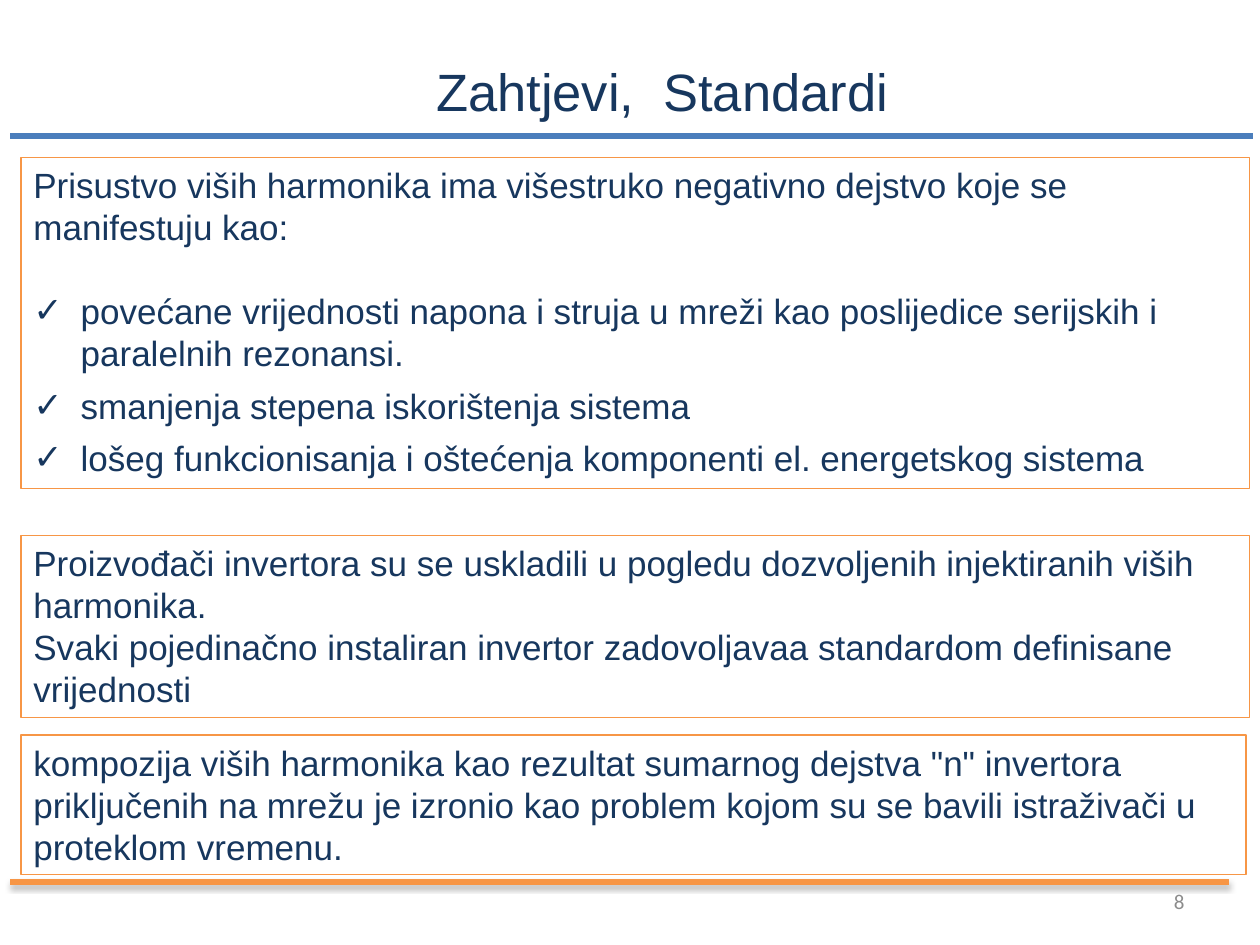
"""Build the slide on requirements and standards for harmonics."""
from lxml import etree
from pptx import Presentation
from pptx.dml.color import RGBColor
from pptx.enum import shapes, text
from pptx.oxml import ns
from pptx.util import Pt

NAVY = RGBColor(0x17, 0x37, 0x5E)
BLUE = RGBColor(0x4B, 0x7E, 0xBC)
ORANGE = RGBColor(0xF7, 0x96, 0x46)
GREY = RGBColor(0x8C, 0x8C, 0x8C)

BODY = {"name": "Arial", "size": Pt(20), "color": NAVY}
TITLE = {"name": "Arial", "size": Pt(30), "color": NAVY}
NUMBER = {"name": "Calibri", "size": Pt(12), "color": GREY}

PLAIN, INTRO, CHECK = "plain", "intro", "check"
SPACE_AFTER = {PLAIN: 0, INTRO: 24, CHECK: 6}
INDENT = 27

RULES = [(6, 77.75, 716, BLUE, False), (6, 504, 702, ORANGE, True)]
LABELS = [
    ("8", (516, 500.5, 168, 29), NUMBER, text.PP_ALIGN.RIGHT,
     text.MSO_ANCHOR.MIDDLE, True),
    ("Zahtjevi,  Standardi", (241, 30.25, 275, 44), TITLE, text.PP_ALIGN.CENTER,
     text.MSO_ANCHOR.TOP, False),
]
BOX_LEFT = 12
BOXES = [
    (90, 702, 189.25, [
        (INTRO, "Prisustvo viših harmonika ima višestruko negativno dejstvo "
                "koje se manifestuju kao:"),
        (CHECK, "povećane vrijednosti napona i struja u mreži kao poslijedice "
                "serijskih i paralelnih rezonansi."),
        (CHECK, "smanjenja stepena iskorištenja sistema"),
        (CHECK, "lošeg funkcionisanja i oštećenja komponenti el. energetskog sistema"),
    ]),
    (306, 702, 104.25, [
        (PLAIN, "Proizvođači invertora su se uskladili u pogledu dozvoljenih "
                "injektiranih viših harmonika."),
        (PLAIN, "Svaki pojedinačno instaliran invertor zadovoljavaa standardom "
                "definisane vrijednosti"),
    ]),
    (420, 700, 79.75, [
        (PLAIN, 'kompozija viših harmonika kao rezultat sumarnog dejstva "n" '
                "invertora priključenih na mrežu je izronio kao problem kojom su "
                "se bavili istraživači u proteklom vremenu."),
    ]),
]


def add_run(p, content, style):
    r = p.add_run()
    r.text = content
    for key, value in style.items():
        if key == "color":
            r.font.color.rgb = value
        else:
            setattr(r.font, key, value)


def add_rule(s, left, y, right, color, shaded):
    line = s.shapes.add_connector(
        shapes.MSO_CONNECTOR.STRAIGHT, Pt(left), Pt(y), Pt(right), Pt(y))
    line.line.color.rgb = color
    line.line.width = Pt(3)
    effects = etree.SubElement(line._element.spPr, ns.qn("a:effectLst"))
    if shaded:
        shadow = etree.SubElement(
            effects, ns.qn("a:outerShdw"), blurRad=str(Pt(3.1)),
            dist=str(Pt(1.8)), dir="5400000", rotWithShape="0")
        black = etree.SubElement(shadow, ns.qn("a:srgbClr"), val="000000")
        etree.SubElement(black, ns.qn("a:alpha"), val="35000")


def add_label(s, content, place, style, align, anchor, wrap):
    tf = s.shapes.add_textbox(*map(Pt, place)).text_frame
    tf.word_wrap, tf.vertical_anchor = wrap, anchor
    p = tf.paragraphs[0]
    p.alignment = align
    add_run(p, content, style)


def add_box(s, top, width, height, lines):
    sp = s.shapes.add_shape(
        shapes.MSO_SHAPE.RECTANGLE, *map(Pt, (BOX_LEFT, top, width, height)))
    sp.shadow.inherit = False
    sp.fill.background()
    sp.line.color.rgb = ORANGE
    sp.line.width = Pt(0.75)
    tf = sp.text_frame
    tf.word_wrap, tf.vertical_anchor = True, text.MSO_ANCHOR.TOP
    for i, (kind, content) in enumerate(lines):
        p = tf.add_paragraph() if i else tf.paragraphs[0]
        p.alignment = text.PP_ALIGN.LEFT
        p.space_after = Pt(SPACE_AFTER[kind])
        if kind == CHECK:
            pPr = p._p.get_or_add_pPr()
            pPr.set("marL", str(Pt(INDENT)))
            pPr.set("indent", str(-Pt(INDENT)))
            etree.SubElement(pPr, ns.qn("a:buFont"), typeface="Arial")
            etree.SubElement(pPr, ns.qn("a:buChar"), char="✓")
        add_run(p, content, BODY)


def main():
    prs = Presentation()
    prs.slide_width, prs.slide_height = Pt(720), Pt(540)
    s = prs.slides.add_slide(prs.slide_layouts[6])
    for rule in RULES:
        add_rule(s, *rule)
    for label in LABELS:
        add_label(s, *label)
    for box in BOXES:
        add_box(s, *box)
    prs.save("out.pptx")


if __name__ == "__main__":
    main()
